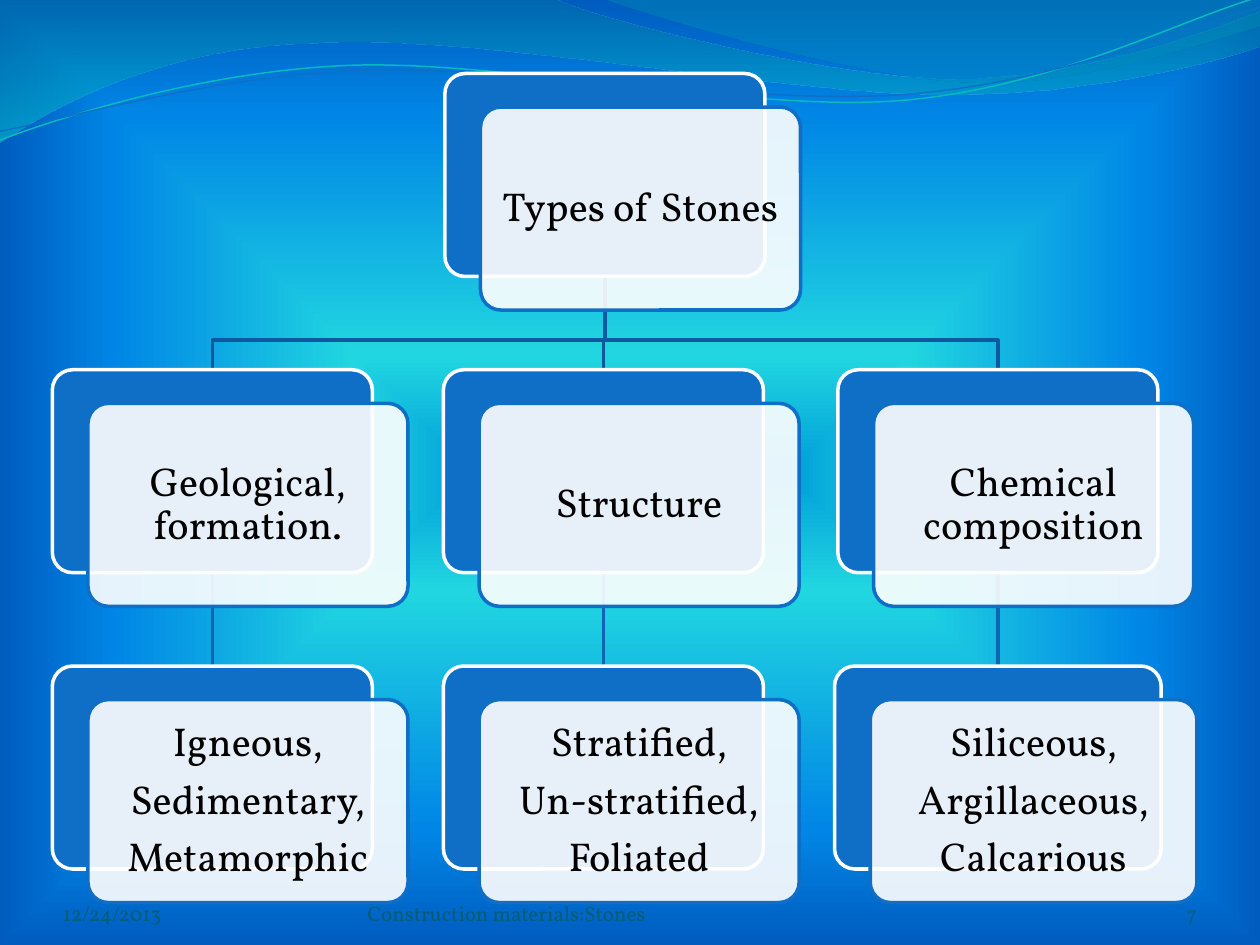
from lxml.etree import SubElement
from pptx import Presentation
from pptx.dml.color import RGBColor
from pptx.enum.shapes import MSO_SHAPE as Preset
from pptx.enum.text import MSO_ANCHOR as Anchor, PP_ALIGN as Align
from pptx.oxml.ns import qn
from pptx.util import Pt

FONT = "Vollkorn"
BLUE, WHITE = "0F6FC6", "FFFFFF"
CARD_W, CARD_H = 182.9, 116
SHIFT_X, SHIFT_Y = 20.4, 19.2  # front card against back card
ROOT_TOP, ROW_PITCH = 42, 169.3
BUS_Y = 194.4  # horizontal part of the branches
LINK_W = 7.2  # least width of the frame around a link

# Each column: left edges and widths of its two nodes, and their lines
COLUMNS = [
    [(29.9, CARD_W, ["Geological, formation."]),
     (29.9, CARD_W, ["Igneous,", "Sedimentary,", "Metamorphic"])],
    [(253.4, CARD_W, ["Structure"]),
     (253.4, CARD_W, ["Stratified,", "Un-stratified,", "Foliated"])],
    [(478.8, CARD_W, ["Chemical composition"]),
     (476.9, 186.7, ["Siliceous,", "Argillaceous,", "Calcarious"])],
]

# Waves in points: a pair is a line target, a six-tuple is a Bezier curve
BROAD_WAVE = [
    (0, 0), (317, -0.7),
    (343, 12, 478, 45, 546, 45), (614, 45, 690, 19, 720, 6.5), (721, 26),
    (708, 32, 626, 55, 537, 54), (448, 54, 275, 20, 185, 24.5),
    (93, 26, 33, 60, -0.7, 81.4), (0, 0)]
RIGHT_WAVE = [
    (345, -0.7), (366, 8, 491, 45, 554, 47),
    (616, 50, 692, 23, 720, 15), (720, 0), (345, -0.7)]
TEAL_STRAND = [
    (0, 80), (35, 67, 114, 41, 199, 37.4), (284, 34, 427, 64, 513, 57.6),
    (600, 51, 675, 11, 718.6, -1.4)]
BLUE_STRAND = [
    (0, 75), (34, 69, 118, 44, 204, 40.3), (290, 37, 430, 60.5, 516, 54),
    (602, 48, 678, 15, 720, 4.3)]


def colour(code):
    return RGBColor.from_string(code)


def set_alpha(colour_element, percent):
    SubElement(colour_element, qn("a:alpha"), val=str(percent * 1000))


def fill_gradient(fill, owner, stops, angle=None):
    """Linear gradient at an angle, or centred on the middle without one."""
    fill.gradient()
    grad = next(owner.iter(qn("a:gradFill")))
    for child in list(grad):
        grad.remove(child)
    stop_list = SubElement(grad, qn("a:gsLst"))
    for position, code, alpha in stops:
        stop = SubElement(stop_list, qn("a:gs"), pos=str(position * 1000))
        set_alpha(SubElement(stop, qn("a:srgbClr"), val=code), alpha)
    if angle is None:
        centre = SubElement(grad, qn("a:path"), {"path": "shape"})
        SubElement(centre, qn("a:fillToRect"),
                   {side: "50000" for side in "ltrb"})
    else:
        SubElement(grad, qn("a:lin"), ang=str(angle * 60000), scaled="0")


def set_line(shape, code, width):
    shape.line.color.rgb = colour(code)
    shape.line.width = Pt(width)


def add_outline(slide, outline, least_width=0):
    """Freeform through the end points, with its curves put in afterwards."""
    ends = [(Pt(part[-2]), Pt(part[-1])) for part in outline]
    closed = ends[0] == ends[-1]
    builder = slide.shapes.build_freeform(*ends[0])
    builder.add_line_segments(ends[1:], close=closed)
    shape = builder.convert_to_shape()
    shape.shadow.inherit = False

    # Widen a narrow frame evenly on both sides
    widening = max(0, Pt(least_width) - shape.width)
    shape.left -= widening // 2
    shape.width += widening

    track = next(shape.element.iter(qn("a:path")))
    track.set("w", str(shape.width))
    for child in list(track):
        track.remove(child)
    for number, part in enumerate(outline):
        kind = "cubicBezTo" if len(part) == 6 else "lnTo"
        step = SubElement(track, qn(f"a:{kind if number else 'moveTo'}"))
        for x, y in zip(part[::2], part[1::2]):
            SubElement(step, qn("a:pt"), x=str(Pt(x) - shape.left),
                       y=str(Pt(y) - shape.top))
    if closed:
        SubElement(track, qn("a:close"))
    return shape


def add_wave(slide, outline, stops):
    wave = add_outline(slide, outline)
    fill_gradient(wave.fill, wave.element, stops, 90)
    wave.line.fill.background()


def add_stroke(slide, outline, code, width, least_width=0):
    stroke = add_outline(slide, outline, least_width)
    stroke.fill.background()
    set_line(stroke, code, width)


def add_card(slide, left, top, width, fill, line):
    card = slide.shapes.add_shape(
        Preset.ROUNDED_RECTANGLE, Pt(left), Pt(top), Pt(width), Pt(CARD_H))
    card.adjustments[0] = 0.1
    card.shadow.inherit = False
    card.fill.solid()
    card.fill.fore_color.rgb = colour(fill)
    set_line(card, line, 2)
    return card


def write(frame, lines, size, code, align, anchor, inset, **spacing):
    frame.word_wrap = True
    frame.vertical_anchor = anchor
    frame.margin_left = frame.margin_right = Pt(inset)
    frame.margin_top = frame.margin_bottom = Pt(inset)
    for number, line in enumerate(lines):
        paragraph = frame.add_paragraph() if number else frame.paragraphs[0]
        paragraph.alignment = align
        for name, value in spacing.items():
            setattr(paragraph, name, value)
        run = paragraph.add_run()
        run.text = line
        run.font.name, run.font.size = FONT, Pt(size)
        run.font.color.rgb = colour(code)


def add_node(slide, left, top, width, lines):
    """Blue back card and a translucent front card with the wording."""
    add_card(slide, left, top, width, BLUE, WHITE)
    front = add_card(slide, left + SHIFT_X, top + SHIFT_Y, width, WHITE, BLUE)
    set_alpha(next(front.element.spPr.iter(qn("a:srgbClr"))), 90)
    write(front.text_frame, lines, 23, "000000", Align.CENTER, Anchor.MIDDLE,
          7, line_spacing=0.9, space_after=Pt(8))


def add_footer(slide, left, width, text, align=Align.LEFT):
    box = slide.shapes.add_textbox(Pt(left), Pt(500.4), Pt(width), Pt(28.8))
    write(box.text_frame, [text], 12, "045D75", align, Anchor.BOTTOM, 0)


def add_hierarchy(slide):
    root = (254.2, ROOT_TOP, CARD_W, ["Types of Stones"])
    branches = [[(left, ROOT_TOP + ROW_PITCH * level, width, lines)
                 for level, (left, width, lines) in enumerate(column, 1)]
                for column in COLUMNS]

    # Links, from the right column to the left
    root_x, root_bottom = root[0] + CARD_W / 2, ROOT_TOP + CARD_H
    for category, kinds in reversed(branches):
        x, top = category[0] + CARD_W / 2, category[1]
        add_stroke(slide, [(x, top + CARD_H), (x, kinds[1])],
                   "0E65B4", 2, LINK_W)
        add_stroke(slide, [(root_x, root_bottom), (root_x, BUS_Y),
                           (x, BUS_Y), (x, top)], "0C599F", 2, LINK_W)

    # Nodes
    for node in [root] + [node for branch in branches for node in branch]:
        add_node(slide, *node)


def main():
    deck = Presentation()
    deck.slide_width, deck.slide_height = Pt(720), Pt(540)
    slide = deck.slides.add_slide(deck.slide_layouts[6])

    # Background and waves
    fill_gradient(slide.background.fill, slide.element, [
        (0, "009DD9", 100), (25, "21D6E0", 100),
        (75, "0087E6", 100), (100, "005CBF", 100)])
    add_wave(slide, BROAD_WAVE, [(0, "0074A1", 45), (100, "00C6CF", 55)])
    add_wave(slide, RIGHT_WAVE, [(0, "00A1A9", 30), (80, "008BBF", 45)])
    add_stroke(slide, TEAL_STRAND, "0AB8BF", 0.85)
    add_stroke(slide, BLUE_STRAND, BLUE, 0.75)

    add_hierarchy(slide)

    # Footer line
    add_footer(slide, 36, 168, "12/24/2013")
    add_footer(slide, 210, 264, "Construction materials:Stones")
    add_footer(slide, 624, 60, "7", Align.RIGHT)
    deck.save("out.pptx")


if __name__ == "__main__":
    main()
